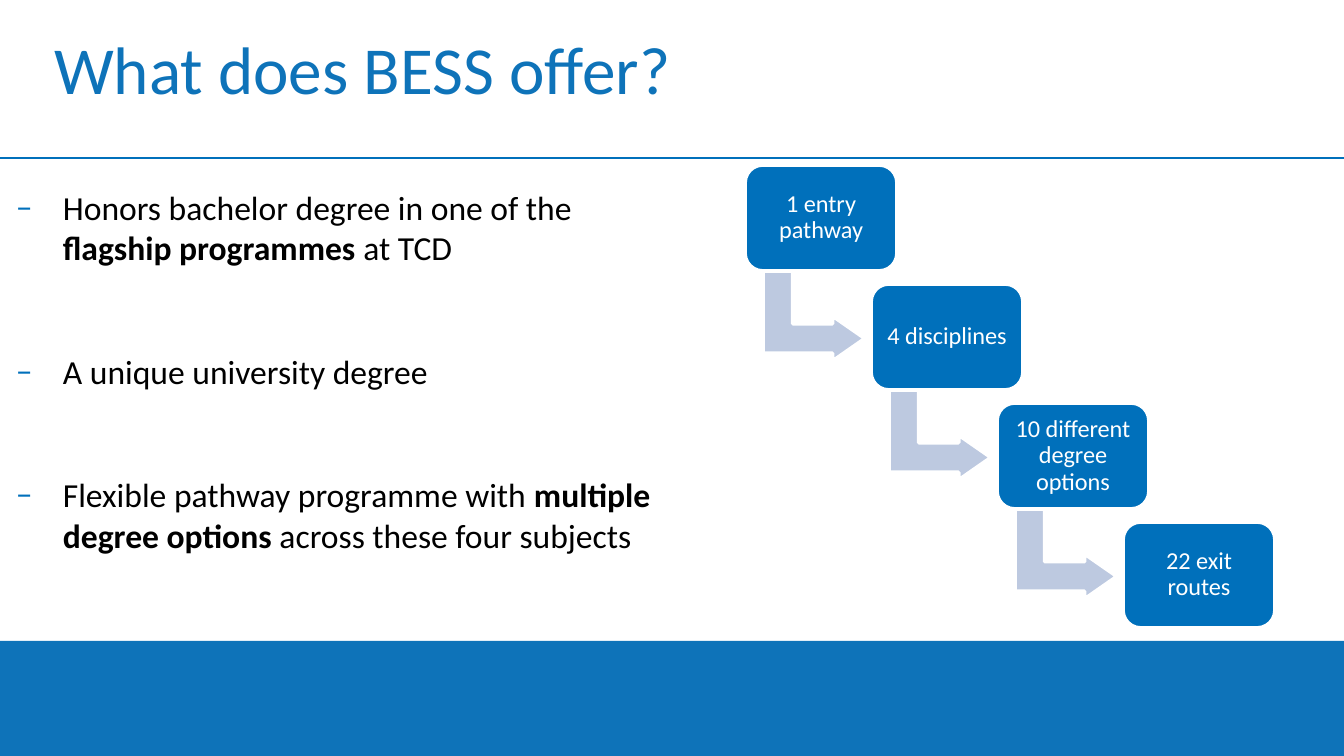
from lxml import etree
from pptx import Presentation
from pptx.dml.color import RGBColor
from pptx.enum.shapes import MSO_CONNECTOR, MSO_SHAPE
from pptx.enum.text import MSO_ANCHOR, MSO_AUTO_SIZE, PP_ALIGN
from pptx.oxml.ns import qn
from pptx.util import Emu, Pt

RECTANGLE = MSO_SHAPE.RECTANGLE
ROUNDED = MSO_SHAPE.ROUNDED_RECTANGLE
BENT_ARROW = MSO_SHAPE.BENT_UP_ARROW
STRAIGHT = MSO_CONNECTOR.STRAIGHT
TOP, MIDDLE, BOTTOM = MSO_ANCHOR.TOP, MSO_ANCHOR.MIDDLE, MSO_ANCHOR.BOTTOM
LEFT, CENTER = PP_ALIGN.LEFT, PP_ALIGN.CENTER
NO_FIT = MSO_AUTO_SIZE.NONE

WIDTH, HEIGHT = 1344, 756
EMU_PER_PX = 914400 / 134.4
TITLE_ONLY = 5

STEPS = ["1 entry pathway", "4 disciplines", "10 different degree options", "22 exit routes"]
STEP_LEFT, STEP_TOP = 745, 165
STEP_RIGHT, STEP_DOWN = 126, 119

# Each point is a list of (text, bold) spans.
POINTS = [
    [("Honors bachelor degree in one of the ", False),
     ("flagship programmes ", True), ("at TCD", False)],
    [("A unique university degree", False)],
    [("Flexible pathway programme with ", False),
     ("multiple degree options ", True), ("across these four subjects", False)],
]


def px(value):
    return Emu(round(value * EMU_PER_PX))


def color(value):
    return RGBColor.from_string(value)


class SlideBuilder:
    font = "Calibri"
    brand = "0E73B9"
    accent = "0070BB"
    pale = "BDC9E0"
    white = "FFFFFF"
    black = "000000"

    def __init__(self, page):
        self.page = page

    def frame(self, shape, anchor, inset=0):
        frame = shape.text_frame
        frame.word_wrap = True
        frame.auto_size = NO_FIT
        frame.vertical_anchor = anchor
        frame.margin_left = frame.margin_right = px(inset)
        frame.margin_top = frame.margin_bottom = px(inset)
        return frame

    def span(self, para, text, size, fill, bold=False):
        span = para.add_run()
        span.text = text
        span.font.name = self.font
        span.font.size = Pt(size)
        span.font.bold = bold
        span.font.color.rgb = color(fill)

    def title(self, text, left, top, width, height):
        box = self.page.shapes.title
        box.left, box.top, box.width, box.height = map(px, (left, top, width, height))
        para = self.frame(box, BOTTOM).paragraphs[0]
        para.alignment = LEFT
        self.span(para, text, 36, self.brand)

    def shape(self, kind, left, top, width, height, fill, outline=None):
        shape = self.page.shapes.add_shape(kind, *map(px, (left, top, width, height)))
        shape.shadow.inherit = False
        shape.fill.solid()
        shape.fill.fore_color.rgb = color(fill)
        if outline:
            shape.line.color.rgb = color(outline)
            shape.line.width = Pt(2)
        else:
            shape.line.fill.background()
        return shape

    def rule(self, top):
        line = self.page.shapes.add_connector(STRAIGHT, px(0), px(top), px(WIDTH), px(top))
        line.line.color.rgb = color(self.accent)
        line.line.width = Pt(0.75)
        etree.SubElement(line._element.spPr, qn("a:effectLst"))

    def dash(self, para, indent):
        """Give the paragraph a coloured dash with a hanging indent."""
        props = para._p.get_or_add_pPr()
        props.set("marL", str(px(indent)))
        props.set("indent", str(px(-indent)))
        bullet_color = etree.SubElement(props, qn("a:buClr"))
        etree.SubElement(bullet_color, qn("a:srgbClr"), val=self.accent)
        etree.SubElement(props, qn("a:buFont"), typeface=self.font)
        etree.SubElement(props, qn("a:buChar"), char="–")

    def bullets(self, points, left, top, width, height):
        box = self.page.shapes.add_textbox(*map(px, (left, top, width, height)))
        frame = self.frame(box, TOP)
        for index, spans in enumerate(points):
            para = frame.add_paragraph() if index else frame.paragraphs[0]
            self.dash(para, 47)
            para.space_before = Pt(44.6 if index else 0)
            for text, bold in spans:
                self.span(para, text, 18, self.black, bold)

    def step(self, text, left, top):
        box = self.shape(ROUNDED, left, top, 152, 106, self.accent, self.white)
        para = self.frame(box, MIDDLE, 7).paragraphs[0]
        para.alignment = CENTER
        para.line_spacing = 0.9
        self.span(para, text, 13, self.white)

    def step_arrow(self, left, top):
        arrow = self.shape(BENT_ARROW, left, top, 90, 102, self.pale, self.white)
        arrow.rotation = 90
        for index, value in enumerate((0.33, 0.25, 0.36)):
            arrow.adjustments[index] = value


def main():
    deck = Presentation()
    deck.slide_width, deck.slide_height = px(WIDTH), px(HEIGHT)
    builder = SlideBuilder(deck.slides.add_slide(deck.slide_layouts[TITLE_ONLY]))

    builder.shape(RECTANGLE, 0, 641, WIDTH, HEIGHT - 641, builder.brand)
    builder.rule(158)
    builder.title("What does BESS offer?", 54, 46, 1102, 62)
    builder.bullets(POINTS, 16, 187, 652, 445)

    for index, text in enumerate(STEPS):
        left = STEP_LEFT + index * STEP_RIGHT
        top = STEP_TOP + index * STEP_DOWN
        if index < len(STEPS) - 1:
            builder.step_arrow(left + 24, top + 100)
        builder.step(text, left, top)

    deck.save("out.pptx")


if __name__ == "__main__":
    main()
